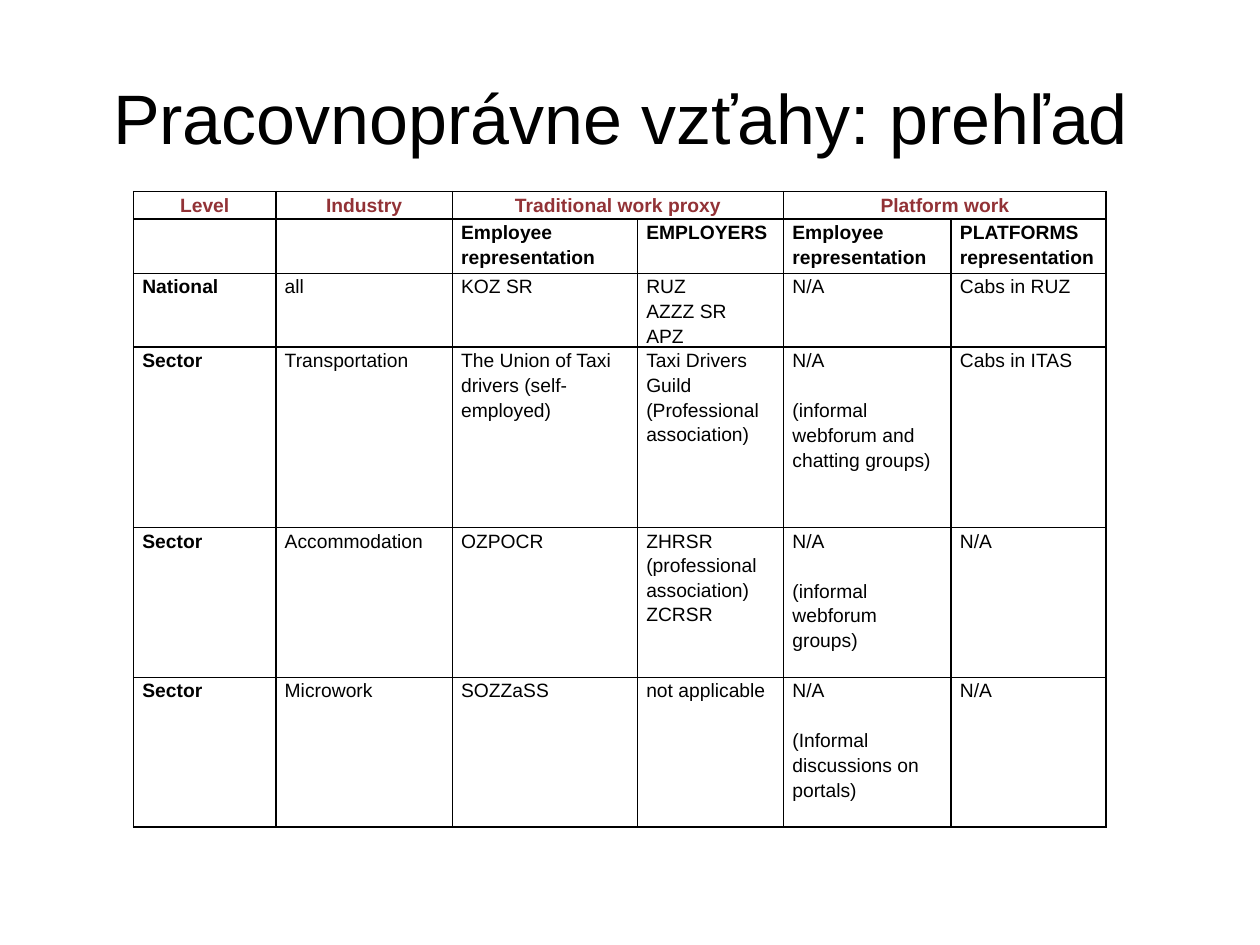
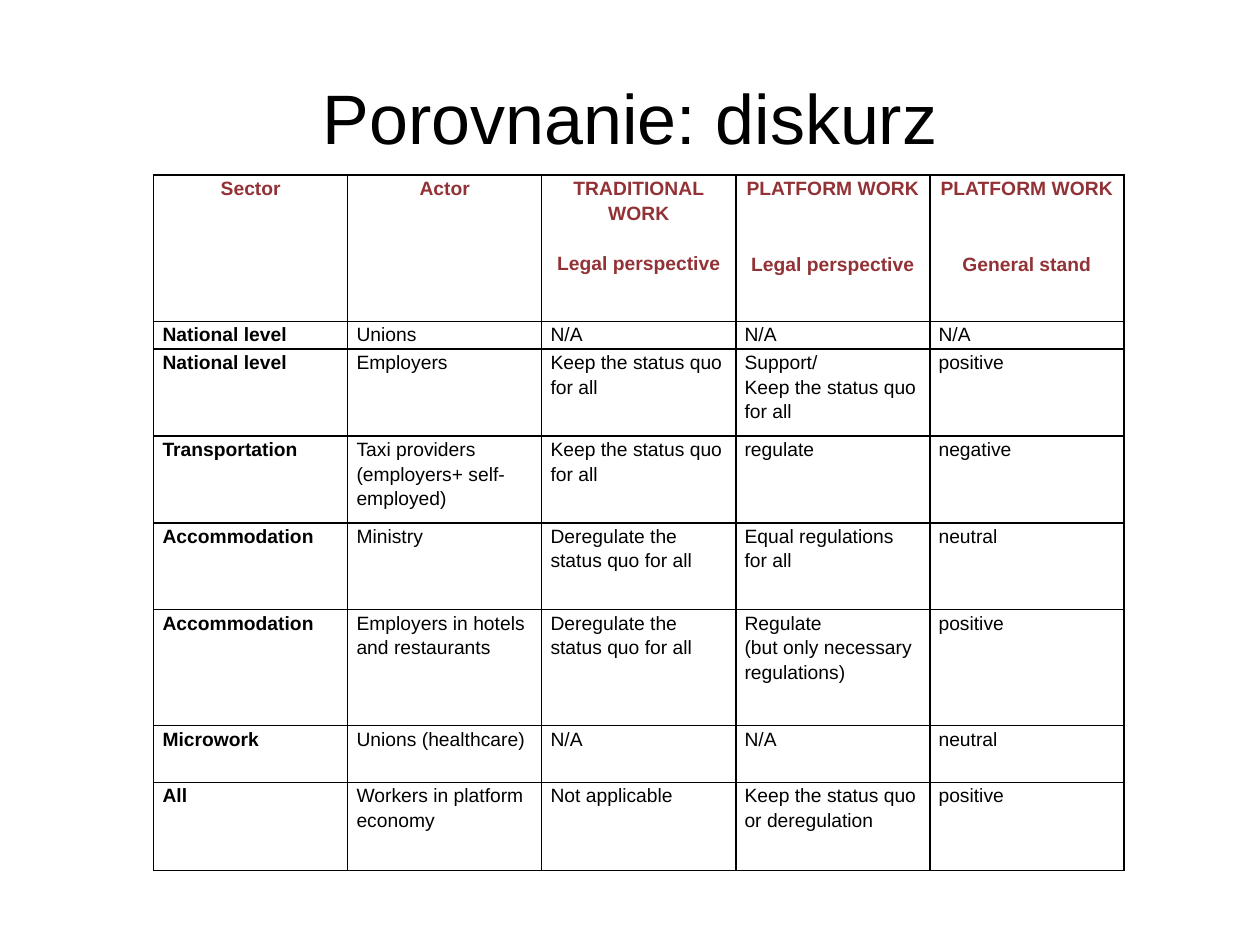
from lxml.etree import SubElement
from pptx import Presentation
from pptx.dml.color import RGBColor
from pptx.enum.text import MSO_ANCHOR, PP_ALIGN as Align
from pptx.oxml.ns import qn
from pptx.util import Inches, Pt

BLACK = RGBColor(0x00, 0x00, 0x00)
WHITE = RGBColor(0xFF, 0xFF, 0xFF)
MAROON = RGBColor(0x92, 0x32, 0x36)

FONT = "Arial"
TITLE_FORMAT = {"name": FONT, "size": Pt(40), "bold": False}
CELL_FORMAT = {"name": FONT, "size": Pt(11)}
CELL_MARGINS = {"margin_left": Inches(0.07), "margin_right": Inches(0.07),
                "margin_top": 0, "margin_bottom": 0}
TITLE_BOX = {"left": Inches(0.5), "top": Inches(0.3),
             "width": Inches(9), "height": Inches(1.25)}
LINE_GAP = 14.5  # points added for each empty line in a cell text

# None continues the cell on its left
RELATIONS = [
    ["Level", "Industry", "Traditional work proxy", None, "Platform work", None],
    ["", "", "Employee representation", "EMPLOYERS",
     "Employee\nrepresentation", "PLATFORMS\nrepresentation"],
    ["National", "all", "KOZ SR", "RUZ\nAZZZ SR\nAPZ", "N/A", "Cabs in RUZ"],
    ["Sector", "Transportation", "The Union of Taxi drivers (self-employed)",
     "Taxi Drivers Guild (Professional association)",
     "N/A\n\n(informal webforum and chatting groups)", "Cabs in ITAS"],
    ["Sector", "Accommodation", "OZPOCR",
     "ZHRSR (professional association)\nZCRSR",
     "N/A\n\n(informal webforum groups)", "N/A"],
    ["Sector", "Microwork", "SOZZaSS", "not applicable",
     "N/A\n\n(Informal discussions on portals)", "N/A"],
]

DISCOURSE = [
    ["Sector", "Actor", "TRADITIONAL WORK\n\nLegal perspective",
     "PLATFORM WORK\n\n\nLegal perspective", "PLATFORM WORK\n\n\nGeneral stand"],
    ["National level", "Unions", "N/A", "N/A", "N/A"],
    ["National level", "Employers", "Keep the status quo for all",
     "Support/\nKeep the status quo for all", "positive"],
    ["Transportation", "Taxi providers (employers+ self-employed)",
     "Keep the status quo for all", "regulate", "negative"],
    ["Accommodation", "Ministry", "Deregulate the status quo for all",
     "Equal regulations for all", "neutral"],
    ["Accommodation", "Employers in hotels and restaurants",
     "Deregulate the status quo for all",
     "Regulate\n(but only necessary regulations)", "positive"],
    ["Microwork", "Unions (healthcare)", "N/A", "N/A", "neutral"],
    ["All", "Workers in platform economy", "Not applicable",
     "Keep the status quo or deregulation", "positive"],
]


def apply(target, values):
    for name, value in values.items():
        setattr(target, name, value)


def add_titled_page(deck, text):
    page = deck.slides.add_slide(deck.slide_layouts[5])
    title = page.shapes.title
    apply(title, TITLE_BOX)
    title.text_frame.vertical_anchor = MSO_ANCHOR.MIDDLE
    para = title.text_frame.paragraphs[0]
    para.alignment = Align.CENTER
    span = para.add_run()
    span.text = text
    apply(span.font, TITLE_FORMAT)
    span.font.color.rgb = BLACK
    return page


def style_cell(cell):
    """White cell with a thin black line on each side."""
    apply(cell, CELL_MARGINS)
    properties = cell._tc.get_or_add_tcPr()
    for side in ("a:lnL", "a:lnR", "a:lnT", "a:lnB"):
        line = SubElement(properties, qn(side), w=str(Pt(1)))
        fill = SubElement(line, qn("a:solidFill"))
        SubElement(fill, qn("a:srgbClr"), val=str(BLACK))
    cell.fill.solid()
    cell.fill.fore_color.rgb = WHITE


def write_cell(cell, text, align, bold, color):
    """One paragraph a line; empty lines become space before the next."""
    frame = cell.text_frame
    empty_lines = 0
    for number, line in enumerate(text.split("\n")):
        if not line:
            empty_lines += 1
            continue
        para = frame.add_paragraph() if number else frame.paragraphs[0]
        apply(para, {"alignment": align, "line_spacing": 1.15,
                     "space_before": Pt(LINE_GAP * empty_lines)})
        empty_lines = 0
        span = para.add_run()
        span.text = line
        apply(span.font, CELL_FORMAT | {"bold": bold})
        span.font.color.rgb = color


def add_grid(page, left, top, widths, heights, rows, bold_rows=1, justified=0):
    """Table with a maroon heading row; the first `justified` columns and
    the second heading row, if any, are justified."""
    table = page.shapes.add_table(
        len(rows), len(widths), Inches(left), Inches(top),
        Inches(sum(widths)), Inches(sum(heights))).table
    apply(table, {"first_row": False, "horz_banding": False})
    for column, width in zip(table.columns, widths):
        column.width = Inches(width)
    for row, height in zip(table.rows, heights):
        row.height = Inches(height)

    for r, texts in enumerate(rows):
        for c, text in enumerate(texts):
            cell = table.cell(r, c)
            style_cell(cell)
            if text is None:
                table.cell(r, c - 1).merge(cell)
                continue
            heading = r < bold_rows
            if r == 0:
                align = Align.CENTER
            elif heading or c < justified:
                align = Align.JUSTIFY
            else:
                align = Align.LEFT
            write_cell(cell, text, align, heading or c == 0,
                       MAROON if r == 0 else BLACK)


def main():
    deck = Presentation()
    deck.slide_width, deck.slide_height = Inches(10), Inches(7.5)

    # Labour relations overview
    page = add_titled_page(deck, "Pracovnoprávne vzťahy: prehľad ")
    add_grid(page, 1.06, 1.52, [1.13, 1.4, 1.47, 1.16, 1.33, 1.23],
             [0.22, 0.43, 0.46, 1.43, 1.19, 1.19], RELATIONS,
             bold_rows=2, justified=2)

    # Comparison of the discourse
    page = add_titled_page(deck, "Porovnanie: diskurz")
    add_grid(page, 1.22, 1.39, [1.54] * 5,
             [1.16, 0.22, 0.69, 0.69, 0.69, 0.92, 0.45, 0.7], DISCOURSE)

    deck.save("out.pptx")


if __name__ == "__main__":
    main()
